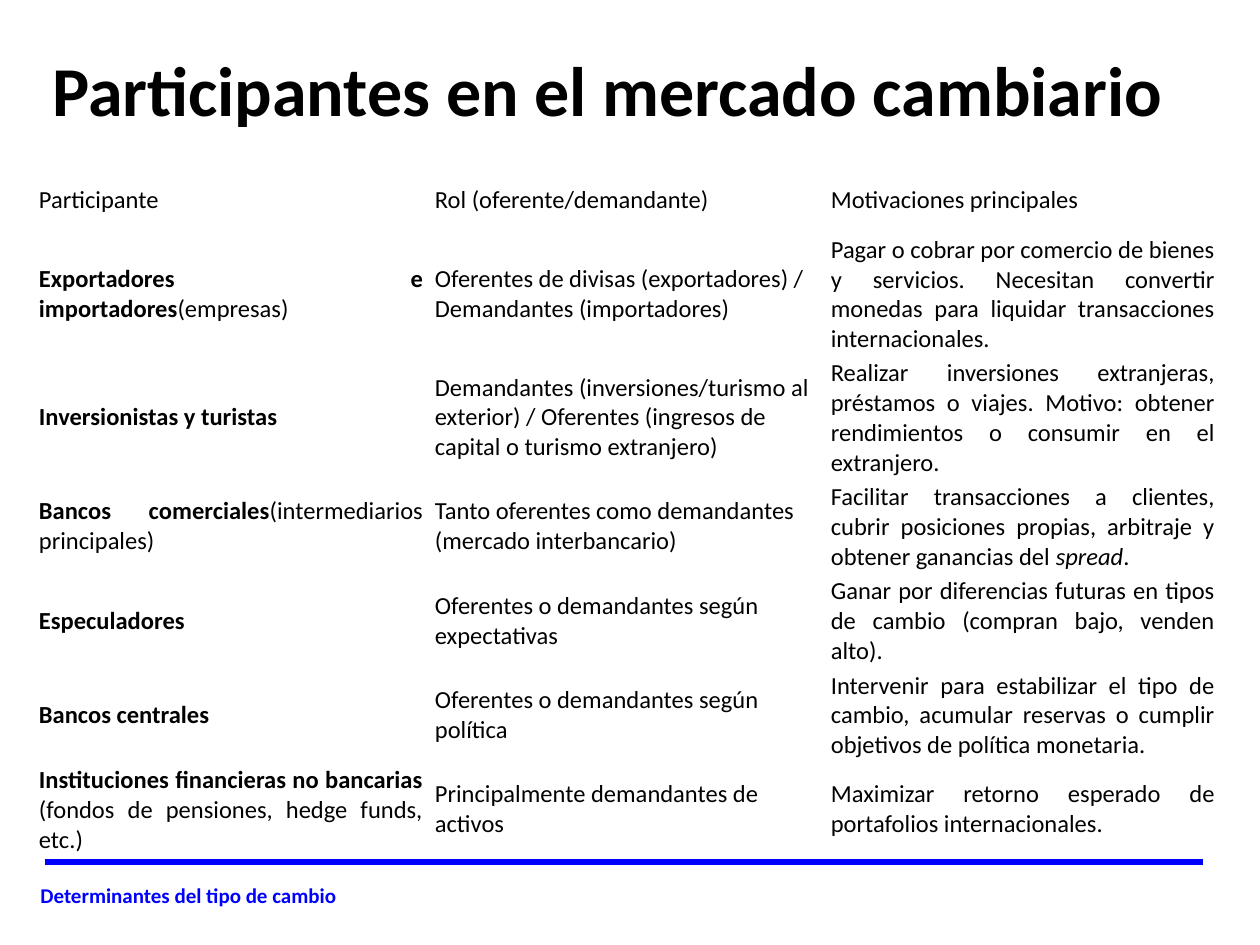
from dataclasses import dataclass

from lxml.etree import SubElement
from pptx import Presentation
from pptx.dml.color import RGBColor
from pptx.enum.shapes import MSO_CONNECTOR
from pptx.enum.text import MSO_ANCHOR, PP_ALIGN
from pptx.oxml.ns import qn
from pptx.util import Emu, Pt

EMU_PER_PX = 914400 / 126
BLACK, BLUE = "000000", "0000FF"


@dataclass(frozen=True)
class Run:
    text: str
    bold: bool = False
    italic: bool = False


@dataclass(frozen=True)
class Participant:
    name: str
    detail: str
    role: str
    motivation: tuple[Run, ...]


@dataclass(frozen=True)
class Label:
    text: str
    box: tuple[int, int, int, int]
    size: int
    color: str
    line_spacing: float = 1.0


LABELS = [
    Label("Determinantes del tipo de cambio", (28, 876, 900, 38), 12, BLUE),
    Label("Participantes en el mercado cambiario", (40, 50, 1180, 183), 40, BLACK, 0.9),
]
HEADINGS = ["Participante", "Rol (oferente/demandante)", "Motivaciones principales"]
PARTICIPANTS = [
    Participant(
        "Exportadores e importadores", "(empresas)",
        "Oferentes de divisas (exportadores) / Demandantes (importadores)",
        (Run("Pagar o cobrar por comercio de bienes y servicios. Necesitan convertir "
             "monedas para liquidar transacciones internacionales."),)),
    Participant(
        "Inversionistas y turistas", "",
        "Demandantes (inversiones/turismo al exterior) / Oferentes (ingresos de "
        "capital o turismo extranjero)",
        (Run("Realizar inversiones extranjeras, préstamos o viajes. Motivo: obtener "
             "rendimientos o consumir en el extranjero."),)),
    Participant(
        "Bancos comerciales", "(intermediarios principales)",
        "Tanto oferentes como demandantes (mercado interbancario)",
        (Run("Facilitar transacciones a clientes, cubrir posiciones propias, arbitraje "
             "y obtener ganancias del "), Run("spread", italic=True), Run("."))),
    Participant(
        "Especuladores", "", "Oferentes o demandantes según expectativas",
        (Run("Ganar por diferencias futuras en tipos de cambio (compran bajo, venden "
             "alto)."),)),
    Participant(
        "Bancos centrales", "", "Oferentes o demandantes según política",
        (Run("Intervenir para estabilizar el tipo de cambio, acumular reservas o cumplir "
             "objetivos de política monetaria."),)),
    Participant(
        "Instituciones financieras no bancarias", " (fondos de pensiones, hedge funds, etc.)",
        "Principalmente demandantes de activos",
        (Run("Maximizar retorno esperado de portafolios internacionales."),)),
]
ROW_HEIGHTS = [64, 111, 111, 84, 84, 84, 84]
COLUMN_WIDTH = 396
CELL_FORMAT = {"margin_left": 6, "margin_right": 6, "margin_top": 3, "margin_bottom": 3}


def px(length: int) -> Emu:
    return Emu(round(length * EMU_PER_PX))


def rgb(color: str) -> RGBColor:
    return RGBColor.from_string(color)


def add_run(paragraph, run: Run, size: int, color: str) -> None:
    text_run = paragraph.add_run()
    text_run.text = run.text
    font_format = {"name": "Calibri", "size": Pt(size), "bold": run.bold, "italic": run.italic}
    for attribute, value in font_format.items():
        setattr(text_run.font, attribute, value)
    text_run.font.color.rgb = rgb(color)


def add_label(slide, label: Label) -> None:
    frame = slide.shapes.add_textbox(*map(px, label.box)).text_frame
    frame.word_wrap = True
    paragraph = frame.paragraphs[0]
    paragraph.line_spacing = label.line_spacing
    add_run(paragraph, Run(label.text, bold=True), label.size, label.color)


def add_footer_rule(slide) -> None:
    rule = slide.shapes.add_connector(
        MSO_CONNECTOR.STRAIGHT, px(45), px(862), px(1203), px(862))
    rule.line.color.rgb = rgb(BLUE)
    rule.line.width = Pt(3)
    SubElement(rule._element.spPr, qn("a:effectLst"))


def fill_cell(cell, runs: tuple[Run, ...], justified: bool) -> None:
    cell.fill.background()
    cell.vertical_anchor = MSO_ANCHOR.MIDDLE
    for attribute, value in CELL_FORMAT.items():
        setattr(cell, attribute, px(value))
    paragraph = cell.text_frame.paragraphs[0]
    paragraph.alignment = PP_ALIGN.JUSTIFY if justified else PP_ALIGN.LEFT
    for run in runs:
        add_run(paragraph, run, 14, BLACK)


def participant_cells(participant: Participant) -> list[tuple[Run, ...]]:
    name = (Run(participant.name, bold=True),)
    if participant.detail:
        name += (Run(participant.detail),)
    return [name, (Run(participant.role),), participant.motivation]


def add_participants_table(slide) -> None:
    rows = [[(Run(heading),) for heading in HEADINGS]]
    rows += [participant_cells(participant) for participant in PARTICIPANTS]
    table = slide.shapes.add_table(
        len(rows), len(HEADINGS), px(33), px(168),
        px(COLUMN_WIDTH * len(HEADINGS)), px(sum(ROW_HEIGHTS))).table
    table.first_row = table.horz_banding = False
    for column in table.columns:
        column.width = px(COLUMN_WIDTH)
    for row_index, (cells, height) in enumerate(zip(rows, ROW_HEIGHTS)):
        table.rows[row_index].height = px(height)
        for column_index, runs in enumerate(cells):
            justified = row_index > 0 and column_index != 1
            fill_cell(table.cell(row_index, column_index), runs, justified)


def main() -> None:
    presentation = Presentation()
    presentation.slide_width, presentation.slide_height = px(1260), px(945)
    slide = presentation.slides.add_slide(presentation.slide_layouts[6])
    footer, title = LABELS
    add_label(slide, footer)
    add_footer_rule(slide)
    add_label(slide, title)
    add_participants_table(slide)
    presentation.save("out.pptx")


if __name__ == "__main__":
    main()
